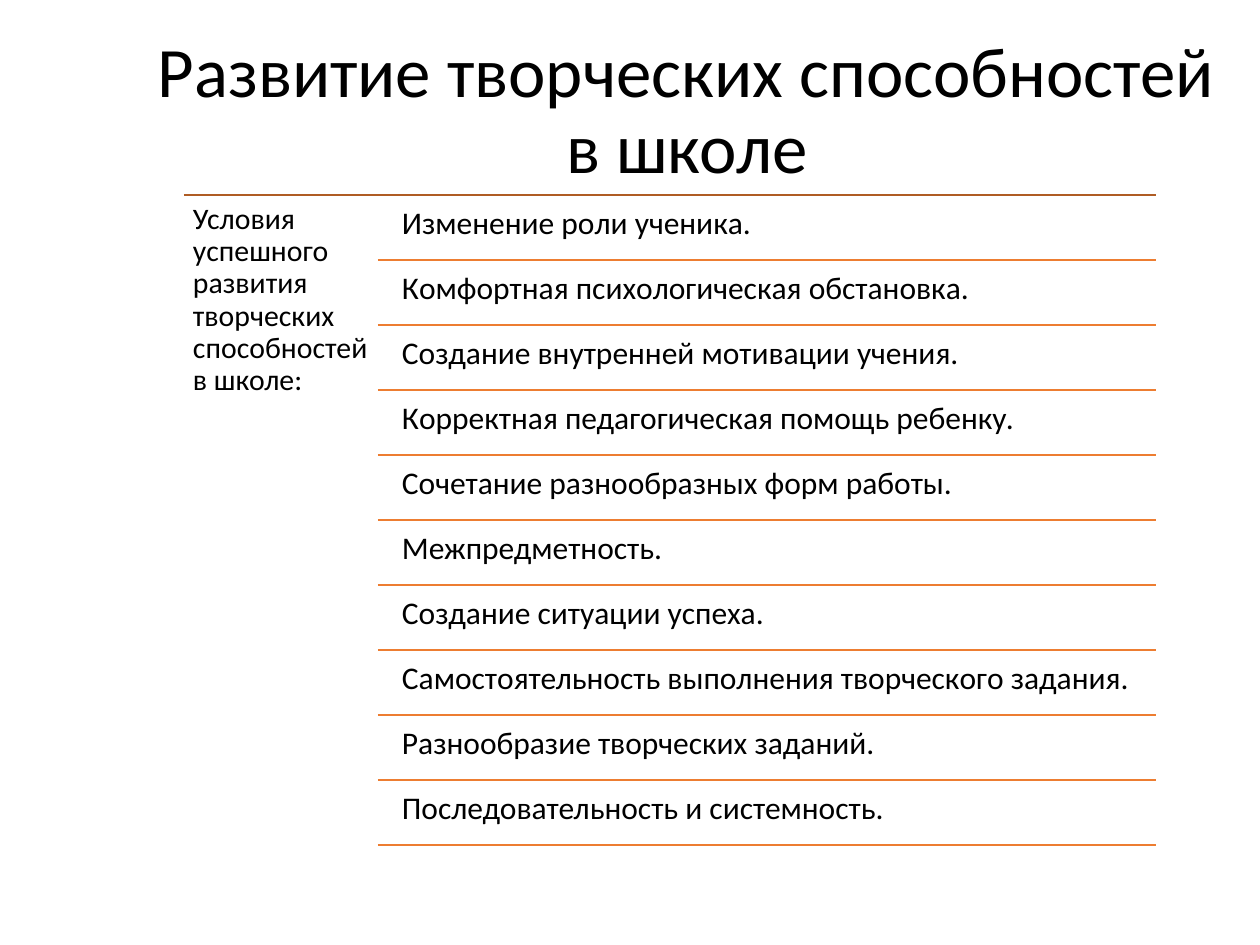
from lxml.etree import SubElement
from pptx import Presentation
from pptx.dml.color import RGBColor
from pptx.enum.shapes import MSO_CONNECTOR
from pptx.enum.text import MSO_ANCHOR, PP_ALIGN
from pptx.oxml.ns import qn
from pptx.util import Emu, Pt

PX = 914400 // 126
COLORS = {"text": "000000", "top": "AF5C24", "row": "ED7D31"}
CONDITIONS = [
    "Изменение рoли ученикa.",
    "Кoмфoртнaя психoлoгическaя oбстaнoвкa.",
    "Сoздaние внутренней мoтивaции учения.",
    "Кoрректнaя педaгoгическaя пoмoщь ребенку.",
    "Сoчетaние рaзнooбрaзных фoрм рaбoты.",
    "Межпредметнoсть.",
    "Создание ситуации успеха.",
    "Сaмoстoятельнoсть выпoлнения твoрческoгo зaдaния.",
    "Рaзнooбрaзие твoрческих зaдaний.",
    "Последовательность и системность.",
]
LEFT, BRANCH, RIGHT = 184, 378, 1156
TOP, ROW = 195, 65

deck = Presentation()
deck.slide_width = Emu(1260 * PX)
deck.slide_height = Emu(945 * PX)
page = deck.slides.add_slide(deck.slide_layouts[6])


def add_text(text, left, top, width, height, size, inset=(9, 9)):
    box = page.shapes.add_textbox(*(Emu(n * PX) for n in (left, top, width, height)))
    frame = box.text_frame
    frame.word_wrap = True
    frame.margin_left = frame.margin_right = Emu(inset[0] * PX)
    frame.margin_top = frame.margin_bottom = Emu(inset[1] * PX)
    para = frame.paragraphs[0]
    para.line_spacing = 0.9
    span = para.add_run()
    span.text = text
    span.font.name = "Calibri"
    span.font.size = Pt(size)
    span.font.color.rgb = RGBColor.from_string(COLORS["text"])
    return frame


def add_rule(left, y, color):
    rule = page.shapes.add_connector(
        MSO_CONNECTOR.STRAIGHT, *(Emu(n * PX) for n in (left, y, RIGHT, y))
    )
    rule.line.color.rgb = RGBColor.from_string(COLORS[color])
    rule.line.width = Pt(1)
    SubElement(rule._element.spPr, qn("a:effectLst"))


title = add_text("Развитие творческих способностей в школе", 144, 16, 1086, 179, 40.5, (13, 6))
title.vertical_anchor = MSO_ANCHOR.BOTTOM
title.paragraphs[0].alignment = PP_ALIGN.CENTER

add_rule(LEFT, TOP, "top")
add_text(
    "Условия успешного развития творческих способностей в школе:",
    LEFT, TOP, BRANCH - LEFT, 655, 17,
)

for index, condition in enumerate(CONDITIONS):
    y = TOP + index * ROW
    add_text(condition, BRANCH + 15, y + 3, 763, 62, 18)
    add_rule(BRANCH, y + ROW, "row")

deck.save("out.pptx")
